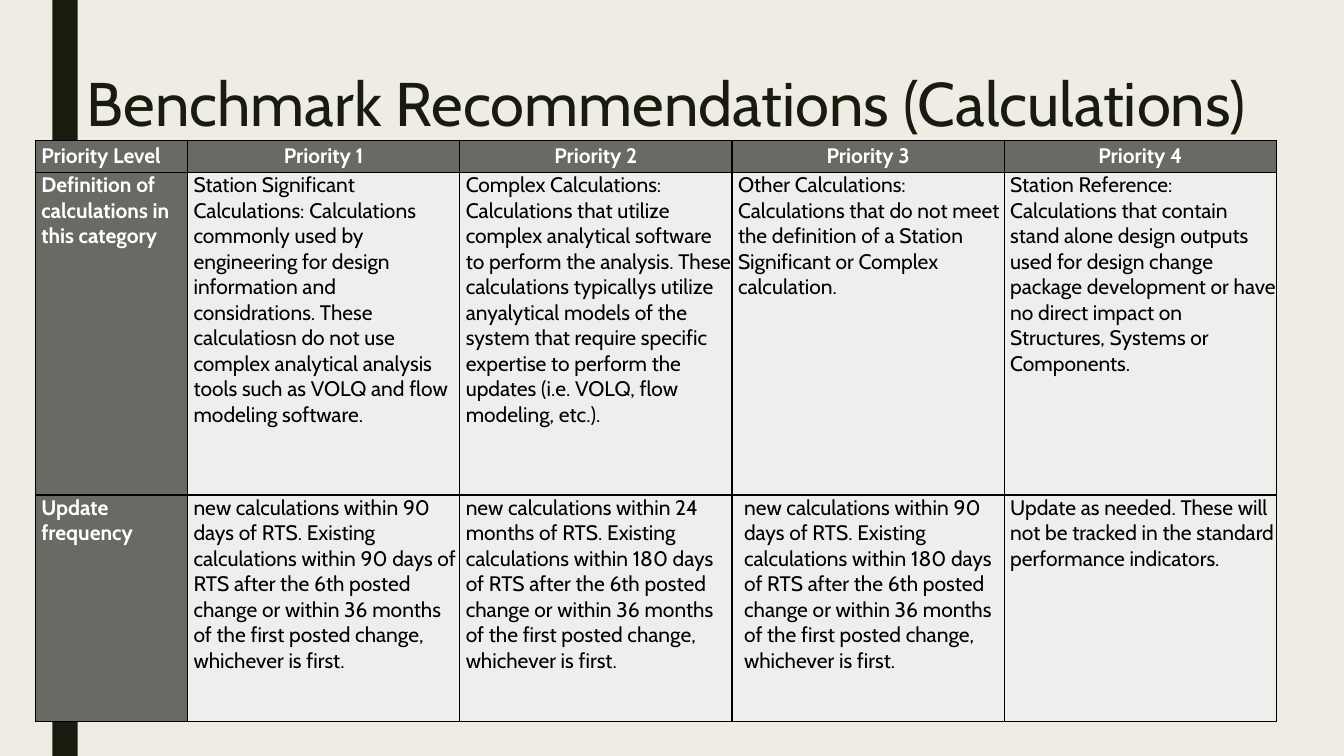
from lxml import etree
from pptx import Presentation
from pptx.dml.color import RGBColor
from pptx.enum.shapes import MSO_SHAPE
from pptx.enum.text import MSO_ANCHOR, MSO_AUTO_SIZE, PP_ALIGN
from pptx.oxml.ns import qn
from pptx.util import Inches, Pt

RECT = MSO_SHAPE.RECTANGLE
TOP, MIDDLE = MSO_ANCHOR.TOP, MSO_ANCHOR.MIDDLE
LEFT, CENTER = PP_ALIGN.LEFT, PP_ALIGN.CENTER
NO_FIT = MSO_AUTO_SIZE.NONE
CREAM = RGBColor(0xEF, 0xED, 0xE3)
DARK = RGBColor(0x19, 0x1B, 0x0E)
GRAY = RGBColor(0x69, 0x6A, 0x64)
PALE = RGBColor(0xEE, 0xEE, 0xED)
WHITE = RGBColor(0xFF, 0xFF, 0xFF)
BLACK = RGBColor(0, 0, 0)

COLS = [1.51] + [2.7] * 4
ROWS = [0.32, 3.2, 2.25]
PERIOD = ("new calculations within {} of RTS. Existing calculations within {} days "
          "of RTS after the 6th posted change or within 36 months of the first "
          "posted change, whichever is first.")
CELLS = [
    ["Priority Level"] + [f"Priority {level}" for level in range(1, 5)],
    ["Definition of calculations in this category",
     "Station Significant Calculations: Calculations commonly used by engineering "
     "for design information and considrations. These calculatiosn do not use "
     "complex analytical analysis tools such as VOLQ and flow modeling software.",
     "Complex Calculations: Calculations that utilize complex analytical software "
     "to perform the analysis. These calculations typicallys utilize anyalytical "
     "models of the system that require specific expertise to perform the updates "
     "(i.e. VOLQ, flow modeling, etc.).",
     "Other Calculations: Calculations that do not meet the definition of a "
     "Station Significant or Complex calculation.",
     "Station Reference: Calculations that contain stand alone design outputs used "
     "for design change package development or have no direct impact on "
     "Structures, Systems or Components."],
    ["Update frequency",
     PERIOD.format("90 days", 90),
     PERIOD.format("24 months", 180),
     PERIOD.format("90 days", 180),
     "Update as needed. These will not be tracked in the standard "
     "performance indicators."],
]


def write(frame, text, size=15, color=BLACK, bold=False, align=LEFT, indent=0, spacing=None):
    para = frame.paragraphs[0]
    para.alignment = align
    para.line_spacing = spacing
    if indent:
        props = para._p.get_or_add_pPr()
        props.set("marL", str(Inches(indent)))
        props.set("indent", "0")
    run = para.add_run()
    run.text = text
    font = run.font
    font.name, font.size, font.bold = "Cabin", Pt(size), bold
    font.color.rgb = color


def outline(cell):
    """Draw a thin black border on all four sides of a filled cell."""
    props = cell._tc.get_or_add_tcPr()
    for place, side in enumerate(("lnL", "lnR", "lnT", "lnB")):
        line = etree.Element(qn(f"a:{side}"), w=str(Pt(1)))
        fill = etree.SubElement(line, qn("a:solidFill"))
        etree.SubElement(fill, qn("a:srgbClr"), val=str(BLACK))
        props.insert(place, line)


deck = Presentation()
deck.slide_width, deck.slide_height = Inches(13.33), Inches(7.5)
slide = deck.slides.add_slide(deck.slide_layouts[5])
slide.background.fill.solid()
slide.background.fill.fore_color.rgb = CREAM

title = slide.shapes.title
title.left, title.top = Inches(0.76), Inches(0.68)
title.width, title.height = Inches(12.03), Inches(1.7)
frame = title.text_frame
frame.vertical_anchor = TOP
frame.auto_size = NO_FIT
frame.word_wrap = True
write(frame, "Benchmark Recommendations (Calculations)", size=44, color=DARK, spacing=0.89)

bar = slide.shapes.add_shape(RECT, Inches(0.52), 0, Inches(0.25), deck.slide_height)
bar.shadow.inherit = False
bar.fill.solid()
bar.fill.fore_color.rgb = DARK
bar.line.fill.background()
title.element.addprevious(bar.element)

table = slide.shapes.add_table(len(ROWS), len(COLS), Inches(0.35), Inches(1.39),
                               Inches(sum(COLS)), Inches(sum(ROWS))).table
for col, width in zip(table.columns, COLS):
    col.width = Inches(width)
for row, height in zip(table.rows, ROWS):
    row.height = Inches(height)

for r, texts in enumerate(CELLS):
    for c, text in enumerate(texts):
        cell = table.cell(r, c)
        head = r == 0 or c == 0
        mid = r == 0 and c > 0
        cell.margin_left = cell.margin_right = cell.margin_top = cell.margin_bottom = 0
        cell.vertical_anchor = MIDDLE if r == 0 else TOP
        cell.fill.solid()
        cell.fill.fore_color.rgb = GRAY if head else PALE
        outline(cell)
        write(cell.text_frame, text, color=WHITE if head else BLACK, bold=head,
              align=CENTER if mid else LEFT,
              indent=0 if mid else 0.12 if (r, c) == (2, 3) else 0.06)

deck.save("out.pptx")
